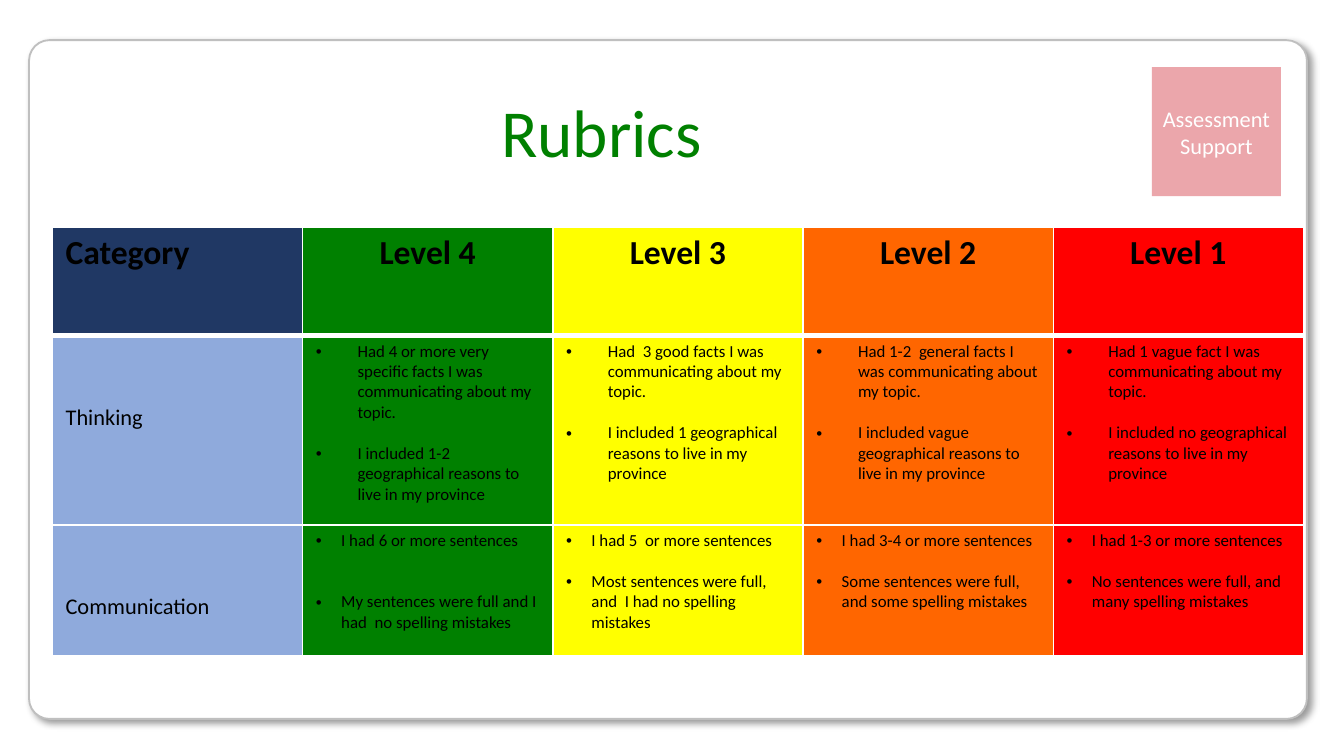
import dataclasses

import pptx
import pptx.dml.color
import pptx.enum.shapes
import pptx.enum.text
import pptx.oxml
import pptx.oxml.ns
import pptx.util

Cm = pptx.util.Cm
Pt = pptx.util.Pt
ALIGN = pptx.enum.text.PP_ALIGN
MIDDLE = pptx.enum.text.MSO_ANCHOR.MIDDLE
SHAPE = pptx.enum.shapes.MSO_SHAPE
NS = pptx.oxml.ns.nsdecls("a")


@dataclasses.dataclass(frozen=True)
class Theme:
    font: str = "Calibri"
    white: str = "FFFFFF"
    black: str = "000000"
    edge: str = "BFBFBF"
    badge: str = "EBA6AB"
    title: str = "008000"
    head: str = "203864"
    label: str = "8FAADC"
    levels: tuple = ("008000", "FFFF00", "FF6600", "FF0000")
    title_size: int = 36
    head_size: int = 18
    label_size: int = 12
    body_size: int = 9
    line_gap: int = 11


THEME = Theme()

HEADS = ["Category", "Level 4", "Level 3", "Level 2", "Level 1"]
# Each row: label, bullet indent in cm, height in cm, bullets per level
ROWS = [
    ("Thinking", 0.79, 3.58, [
        ("Had 4 or more very specific facts I was communicating about my topic.",
         "I included 1-2 geographical reasons to live in my province"),
        ("Had  3 good facts I was communicating about my topic.",
         "I included 1 geographical reasons to live in my province"),
        ("Had 1-2  general facts I was communicating about my topic.",
         "I included vague geographical reasons to live in my province"),
        ("Had 1 vague fact I was communicating about my topic.",
         "I included no geographical reasons to live in my province"),
    ]),
    ("Communication", 0.48, 2.47, [
        ("I had 6 or more sentences",
         "My sentences were full and I had  no spelling mistakes"),
        ("I had 5  or more sentences",
         "Most sentences were full, and  I had no spelling mistakes"),
        ("I had 3-4 or more sentences",
         "Some sentences were full, and some spelling mistakes"),
        ("I had 1-3 or more sentences",
         "No sentences were full, and many spelling mistakes"),
    ]),
]
WIDE_GAP = "My sentences"  # this bullet stands two lines below the one before


def rgb(code):
    return pptx.dml.color.RGBColor.from_string(code)


def put(item, values):
    for name, value in values.items():
        setattr(item, name, value)


def paint(item, code):
    item.fill.solid()
    item.fill.fore_color.rgb = rgb(code)


def write(para, text, size, color, bold=False, align=ALIGN.LEFT):
    para.alignment = align
    run = para.add_run()
    run.text = text
    put(run.font, {"name": THEME.font, "size": Pt(size), "bold": bold})
    run.font.color.rgb = rgb(color)


def add_card(slide, left, top, width, height):
    card = slide.shapes.add_shape(
        SHAPE.ROUNDED_RECTANGLE, Cm(left), Cm(top), Cm(width), Cm(height))
    card.adjustments[0] = 0.03
    paint(card, THEME.white)
    card.line.color.rgb = rgb(THEME.edge)
    card.line.width = Pt(1)
    # Soft shadow to the lower right
    card.shadow.inherit = False
    effects = card._element.spPr.find(pptx.oxml.ns.qn("a:effectLst"))
    effects.append(pptx.oxml.parse_xml(
        f'<a:outerShdw {NS} blurRad="{Pt(4)}" dist="{Pt(3)}" dir="2700000" '
        f'algn="tl" rotWithShape="0"><a:srgbClr val="{THEME.black}">'
        '<a:alpha val="40000"/></a:srgbClr></a:outerShdw>'))


def add_badge(slide, left, top, side):
    badge = slide.shapes.add_shape(
        SHAPE.RECTANGLE, Cm(left), Cm(top), Cm(side), Cm(side))
    badge.shadow.inherit = False
    paint(badge, THEME.badge)
    badge.line.fill.background()
    frame = badge.text_frame
    put(frame, {"word_wrap": True, "vertical_anchor": MIDDLE,
                "margin_left": Cm(0.18), "margin_right": Cm(0.18),
                "margin_top": Cm(0.1), "margin_bottom": Cm(0.1)})
    write(frame.paragraphs[0], "Assessment Support", THEME.label_size,
          THEME.white, align=ALIGN.CENTER)


def set_title(slide, left, top, width, height):
    title = slide.shapes.title
    put(title, {"left": Cm(left), "top": Cm(top),
                "width": Cm(width), "height": Cm(height)})
    put(title.text_frame, {"word_wrap": True, "vertical_anchor": MIDDLE})
    write(title.text_frame.paragraphs[0], "Rubrics", THEME.title_size,
          THEME.title, align=ALIGN.CENTER)
    # Bring the title in front of the card
    slide.shapes._spTree.append(title._element)


def style_cell(cell, color, base=1, roof=1):
    put(cell, {"margin_left": Cm(0.25), "margin_right": Cm(0.25),
               "margin_top": Cm(0.11), "margin_bottom": Cm(0.11)})
    paint(cell, color)
    props = cell._tc.get_or_add_tcPr()
    sides = {"lnL": 1, "lnR": 1, "lnT": roof, "lnB": base}
    for spot, (side, width) in enumerate(sides.items()):
        props.insert(spot, pptx.oxml.parse_xml(
            f'<a:{side} {NS} w="{Pt(width)}"><a:solidFill>'
            f'<a:srgbClr val="{THEME.white}"/></a:solidFill></a:{side}>'))


def add_bullets(frame, texts, indent):
    for spot, text in enumerate(texts):
        para = frame.add_paragraph() if spot else frame.paragraphs[0]
        props = para._p.get_or_add_pPr()
        props.set("marL", str(Cm(indent)))
        props.set("indent", str(-Cm(indent)))
        props.append(pptx.oxml.parse_xml(f'<a:buFont {NS} typeface="Arial"/>'))
        props.append(pptx.oxml.parse_xml(f'<a:buChar {NS} char="•"/>'))
        if spot:
            lines = 2 if text.startswith(WIDE_GAP) else 1
            para.space_before = Pt(lines * THEME.line_gap)
        write(para, text, THEME.body_size, THEME.black)


def add_rubric(slide, left, top, width, head):
    heights = [head] + [row[2] for row in ROWS]
    table = slide.shapes.add_table(
        len(heights), len(HEADS), Cm(left), Cm(top),
        Cm(width), Cm(sum(heights))).table
    for column in table.columns:
        column.width = Cm(width / len(HEADS))
    for row, height in zip(table.rows, heights):
        row.height = Cm(height)

    # Header row
    for col, (text, color) in enumerate(zip(HEADS, (THEME.head, *THEME.levels))):
        cell = table.cell(0, col)
        style_cell(cell, color, base=3)
        write(cell.text_frame.paragraphs[0], text, THEME.head_size, THEME.black,
              bold=True, align=ALIGN.CENTER if col else ALIGN.LEFT)

    # Category rows
    for spot, (label, indent, _, levels) in enumerate(ROWS, 1):
        roof = 3 if spot == 1 else 1
        cell = table.cell(spot, 0)
        style_cell(cell, THEME.label, roof=roof)
        cell.margin_top = Cm(1.3)
        write(cell.text_frame.paragraphs[0], label, THEME.label_size, THEME.black)
        for col, (texts, color) in enumerate(zip(levels, THEME.levels), 1):
            cell = table.cell(spot, col)
            style_cell(cell, color, roof=roof)
            add_bullets(cell.text_frame, texts, indent)


def main():
    deck = pptx.Presentation()
    put(deck, {"slide_width": Cm(25.4), "slide_height": Cm(14.29)})
    slide = deck.slides.add_slide(deck.slide_layouts[5])
    add_card(slide, 0.55, 0.76, 24.15, 12.83)
    add_badge(slide, 21.77, 1.27, 2.44)
    add_rubric(slide, 0.99, 4.29, 23.65, 2.05)
    set_title(slide, 0.99, 1.57, 20.75, 1.8)
    deck.save("out.pptx")


if __name__ == "__main__":
    main()
